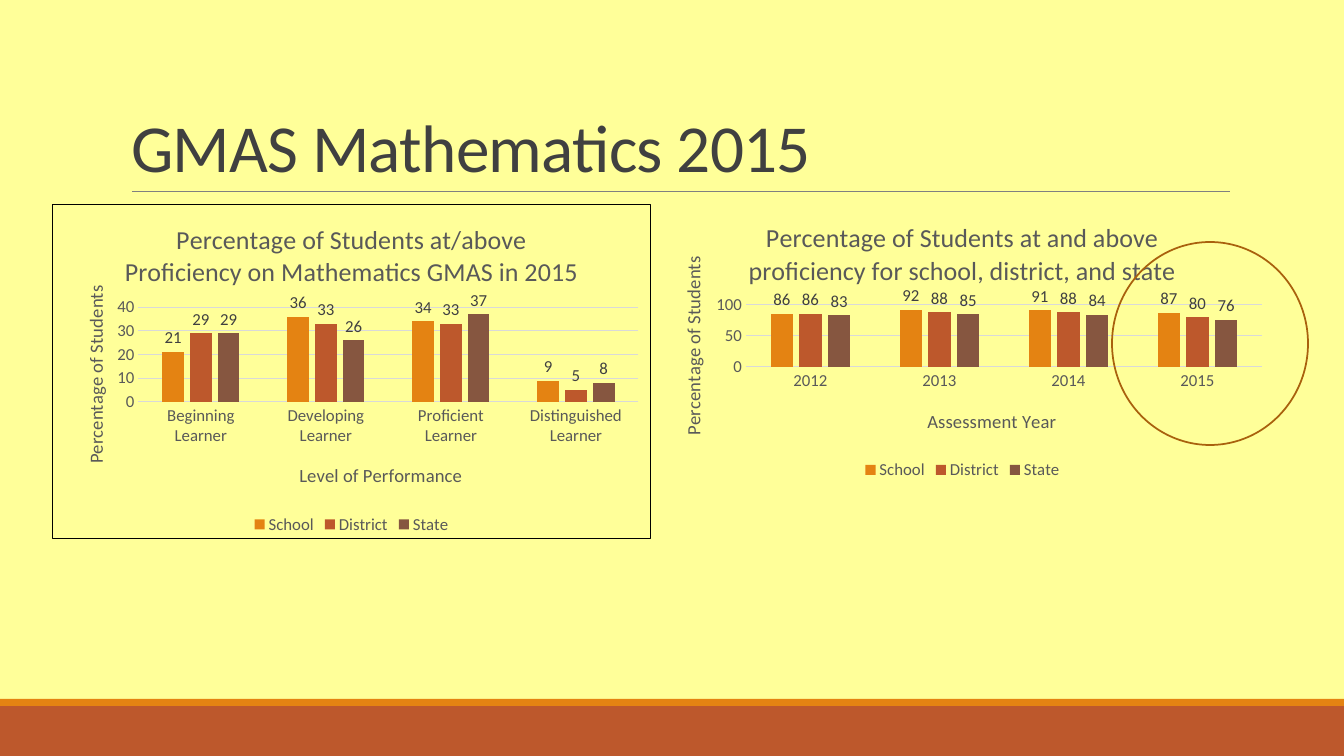
from lxml import etree
from pptx import Presentation
from pptx.chart.data import CategoryChartData
from pptx.dml.color import RGBColor
from pptx.enum.chart import XL_CHART_TYPE, XL_LABEL_POSITION, XL_LEGEND_POSITION, XL_TICK_MARK
from pptx.enum.shapes import MSO_CONNECTOR, MSO_SHAPE
from pptx.enum.text import MSO_ANCHOR, PP_ALIGN
from pptx.oxml import parse_xml
from pptx.oxml.ns import nsdecls, qn
from pptx.util import Pt

PX = 914400 / 100.8


def px(*lengths):
    return [round(length * PX) for length in lengths]


def paint(color_format, hex_color):
    color_format.rgb = RGBColor.from_string(hex_color)


prs = Presentation()
prs.slide_width, prs.slide_height = px(1344, 756)
slide = prs.slides.add_slide(prs.slide_layouts[5])
slide.background.fill.solid()
paint(slide.background.fill.fore_color, "FFFF99")

# Footer bands
for top, height, color in [(706, 50, "BD582C"), (699, 7, "E48312")]:
    band = slide.shapes.add_shape(MSO_SHAPE.RECTANGLE, *px(0, top, 1344, height))
    band.shadow.inherit = False
    band.fill.solid()
    paint(band.fill.fore_color, color)
    band.line.fill.background()

# Title and the rule below it
title = slide.shapes.title
title.left, title.top, title.width, title.height = px(121, 31, 1109, 160)
title.text_frame.text = "GMAS Mathematics 2015"
title.text_frame.vertical_anchor = MSO_ANCHOR.BOTTOM
heading = title.text_frame.paragraphs[0]
heading.alignment = PP_ALIGN.LEFT
heading.line_spacing = 0.85
heading.font.name, heading.font.size = "Calibri", Pt(48)
paint(heading.font.color, "404040")
heading.runs[0].font._element.set("spc", "-50")

rule = slide.shapes.add_connector(MSO_CONNECTOR.STRAIGHT, *px(132, 191, 1230, 191))
paint(rule.line.color, "808080")
rule.line.width = Pt(0.5)
etree.SubElement(rule._element.spPr, qn("a:effectLst"))

# Charts: frame and plot are left, top, width, height; title spots are left, top
SERIES_COLORS = {"School": "E48312", "District": "BD582C", "State": "865640"}
results = [
    dict(title="Percentage of Students at/above Proficiency on Mathematics GMAS in 2015",
         axis="Level of Performance", top_value=40, step=10, border=True,
         categories=["Beginning Learner", "Developing Learner",
                     "Proficient Learner", "Distinguished Learner"],
         values=[(21, 36, 34, 9), (29, 33, 33, 5), (29, 26, 37, 8)],
         frame=(52, 204, 599, 335), plot=(138, 307, 501, 95),
         category_spot=(296, 459), value_spot=(79, 282)),
    dict(title="Percentage of Students at and above proficiency for school, district, and state",
         axis="Assessment Year", top_value=100, step=50, border=False,
         categories=["2012", "2013", "2014", "2015"],
         values=[(86, 92, 91, 87), (86, 88, 88, 80), (83, 85, 84, 76)],
         frame=(651, 204, 623, 280), plot=(746, 305, 516, 62),
         category_spot=(924, 405), value_spot=(677, 253)),
]

for result in results:
    data = CategoryChartData()
    data.categories = result["categories"]
    for name, values in zip(SERIES_COLORS, result["values"]):
        data.add_series(name, values)
    chart = slide.shapes.add_chart(
        XL_CHART_TYPE.COLUMN_CLUSTERED, *px(*result["frame"]), data).chart
    chart.font.name, chart.font.size = "Calibri", Pt(12)
    paint(chart.font.color, "595959")

    # Columns and value labels
    columns = chart.plots[0]
    columns.gap_width, columns.overlap = 219, -27
    columns.vary_by_categories = False
    for series in columns.series:
        series.format.fill.solid()
        paint(series.format.fill.fore_color, SERIES_COLORS[series.name])
        labels = series.data_labels
        labels.show_value = True
        labels.position = XL_LABEL_POSITION.OUTSIDE_END
        labels.font.name, labels.font.size = "Calibri", Pt(12)
        paint(labels.font.color, "404040")

    # Axes and legend
    by_category, by_value = chart.category_axis, chart.value_axis
    for axis in (by_category, by_value):
        axis.major_tick_mark = axis.minor_tick_mark = XL_TICK_MARK.NONE
    by_value.minimum_scale, by_value.maximum_scale = 0, result["top_value"]
    by_value.major_unit = result["step"]
    by_value.format.line.fill.background()
    for line in (by_category.format.line, by_value.major_gridlines.format.line):
        paint(line.color, "D9D9D9")
        line.width = Pt(0.75)
    chart.has_legend = True
    chart.legend.position = XL_LEGEND_POSITION.BOTTOM
    chart.legend.include_in_layout = False

    # Chart and axis titles
    for holder, text, size in [(chart.chart_title, result["title"], 18.6),
                               (by_category.axis_title, result["axis"], 13.3),
                               (by_value.axis_title, "Percentage of Students", 13.3)]:
        holder.text_frame.text = text
        font = holder.text_frame.paragraphs[0].font
        font.name, font.size, font.bold = "Calibri", Pt(size), False
        paint(font.color, "595959")
    turned = by_value.axis_title.text_frame._txBody.find(qn("a:bodyPr"))
    turned.set("rot", "-5400000")
    turned.set("vert", "horz")

    # Fixed places for the plot and the axis titles, as shares of the chart
    left, top, width, height = result["frame"]
    plot_area = chart.element.find(".//" + qn("c:plotArea"))
    for part, spot in [(plot_area, result["plot"]),
                       (by_category.axis_title._element, result["category_spot"]),
                       (by_value.axis_title._element, result["value_spot"])]:
        layout = part.find(qn("c:layout"))
        if layout is None:
            layout = etree.Element(qn("c:layout"))
            part.insert(0 if part is plot_area else 1, layout)
        manual = etree.SubElement(layout, qn("c:manualLayout"))
        settings = [("xMode", "edge"), ("yMode", "edge")]
        if part is plot_area:
            settings.insert(0, ("layoutTarget", "inner"))
        shares = [(spot[0] - left) / width, (spot[1] - top) / height]
        shares += [length / whole for length, whole in zip(spot[2:], (width, height))]
        settings += [(key, f"{share:.4f}") for key, share in zip("xywh", shares)]
        for key, setting in settings:
            etree.SubElement(manual, qn(f"c:{key}")).set("val", setting)

    # Clear chart background, with a border where wanted
    stroke = '<a:solidFill><a:srgbClr val="000000"/></a:solidFill>' if result["border"] else "<a:noFill/>"
    chart.element.find(qn("c:chart")).addnext(parse_xml(
        f'<c:spPr {nsdecls("c", "a")}><a:noFill/><a:ln w="9525">{stroke}</a:ln></c:spPr>'))

# Ring around the 2015 results
ring = slide.shapes.add_shape(MSO_SHAPE.OVAL, *px(1112, 242, 196, 203))
ring.shadow.inherit = False
ring.fill.background()
paint(ring.line.color, "A9610D")
ring.line.width = Pt(1.25)

prs.save("out.pptx")
